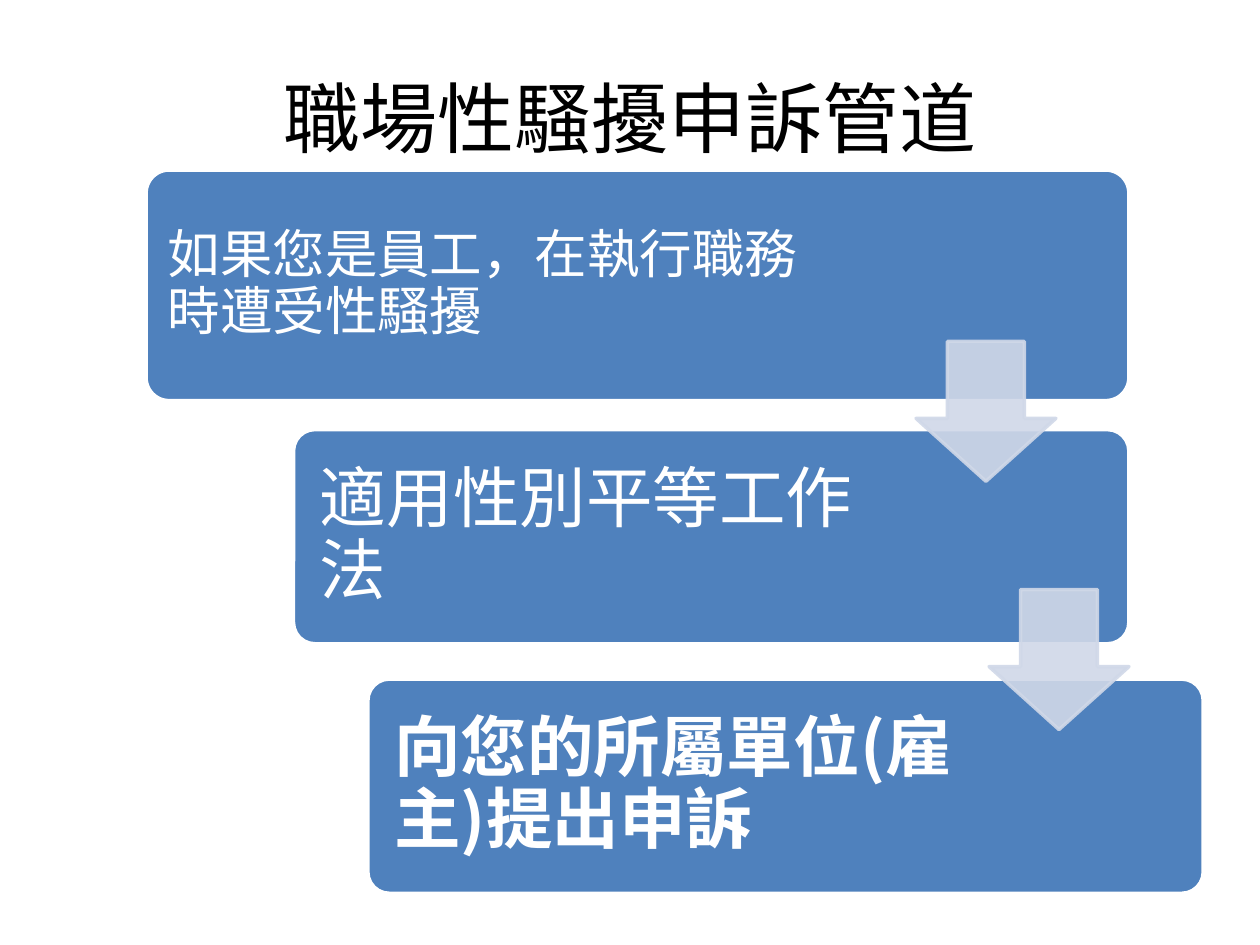
from lxml.etree import SubElement
from pptx import Presentation
from pptx.dml.color import RGBColor
from pptx.enum.shapes import MSO_SHAPE
from pptx.enum.text import MSO_ANCHOR, PP_ALIGN
from pptx.oxml.ns import qn
from pptx.util import Inches, Pt

FONT = "Noto Sans CJK SC"
COLORS = {"black": "000000", "white": "FFFFFF", "step": "4F81BD", "arrow": "D0D8E8"}

TITLE = "職場性騷擾申訴管道"
# Box is left, top, width, height in inches
STEPS = [
    {"text": "如果您是員工，在執行職務時遭受性騷擾", "box": (1.16, 1.35, 7.8, 1.83),
     "text_width": 5.65, "size": 30, "margin": 0.12, "bold": False},
    {"text": "適用性別平等工作法", "box": (2.33, 3.41, 6.63, 1.7),
     "text_width": 4.84, "size": 38, "margin": 0.16, "bold": False},
    {"text": "向您的所屬單位(雇主)提出申訴", "box": (2.92, 5.39, 6.63, 1.7),
     "text_width": 4.84, "size": 38, "margin": 0.16, "bold": True},
]
TEXT_INSET = 0.05
ARROW_SIZE = 1.11
ARROWS = [(7.27, 2.71), (7.85, 4.68)]
ARROW_OPACITY = 90


def color(name):
    return RGBColor.from_string(COLORS[name])


def write_text(frame, text, *, size, color_name, bold=False, align=PP_ALIGN.LEFT,
               line_spacing=None, margin=None):
    frame.word_wrap = True
    frame.vertical_anchor = MSO_ANCHOR.MIDDLE
    if margin is not None:
        frame.margin_left = frame.margin_right = Inches(margin)
        frame.margin_top = frame.margin_bottom = Inches(margin)
    paragraph = frame.paragraphs[0]
    paragraph.alignment = align
    paragraph.line_spacing = line_spacing
    run = paragraph.add_run()
    run.text = text
    run.font.size = Pt(size)
    run.font.bold = bold
    run.font.color.rgb = color(color_name)
    run.font.name = FONT
    # East Asian characters take their own typeface
    SubElement(run.font._element, qn("a:ea"), typeface=FONT)


def add_block(slide, preset, box, adjustments, fill, line, opacity=100):
    shape = slide.shapes.add_shape(preset, *map(Inches, box))
    shape.shadow.inherit = False
    for index, value in enumerate(adjustments):
        shape.adjustments[index] = value
    shape.fill.solid()
    shape.fill.fore_color.rgb = color(fill)
    shape.line.color.rgb = color(line)
    shape.line.width = Pt(2)
    if opacity < 100:
        for color_element in shape._element.spPr.iter(qn("a:srgbClr")):
            SubElement(color_element, qn("a:alpha"), val=str(opacity * 1000))


def main():
    presentation = Presentation()
    presentation.slide_width, presentation.slide_height = Inches(10), Inches(7.5)
    slide = presentation.slides.add_slide(presentation.slide_layouts[5])

    # Title
    title = slide.shapes.title
    title.left, title.top = Inches(0.5), Inches(0.3)
    title.width, title.height = Inches(9), Inches(1.25)
    write_text(title.text_frame, TITLE, size=44, color_name="black", align=PP_ALIGN.CENTER)

    # Steps, each a rounded box with its text on the left
    for step in STEPS:
        left, top, _, height = step["box"]
        add_block(slide, MSO_SHAPE.ROUNDED_RECTANGLE, step["box"], [0.1], "step", "white")
        text_box = slide.shapes.add_textbox(
            Inches(left + TEXT_INSET), Inches(top + TEXT_INSET),
            Inches(step["text_width"]), Inches(height - 2 * TEXT_INSET))
        write_text(text_box.text_frame, step["text"], size=step["size"], color_name="white",
                   bold=step["bold"], line_spacing=0.9, margin=step["margin"])

    # Arrows between steps
    for left, top in ARROWS:
        add_block(slide, MSO_SHAPE.DOWN_ARROW, (left, top, ARROW_SIZE, ARROW_SIZE),
                  [0.45, 0.55], "arrow", "arrow", ARROW_OPACITY)
        # Shaft takes 55% of the width, head 45% of the height
        slide.shapes[-1].adjustments[0] = 0.55
        slide.shapes[-1].adjustments[1] = 0.45

    presentation.save("out.pptx")


if __name__ == "__main__":
    main()
